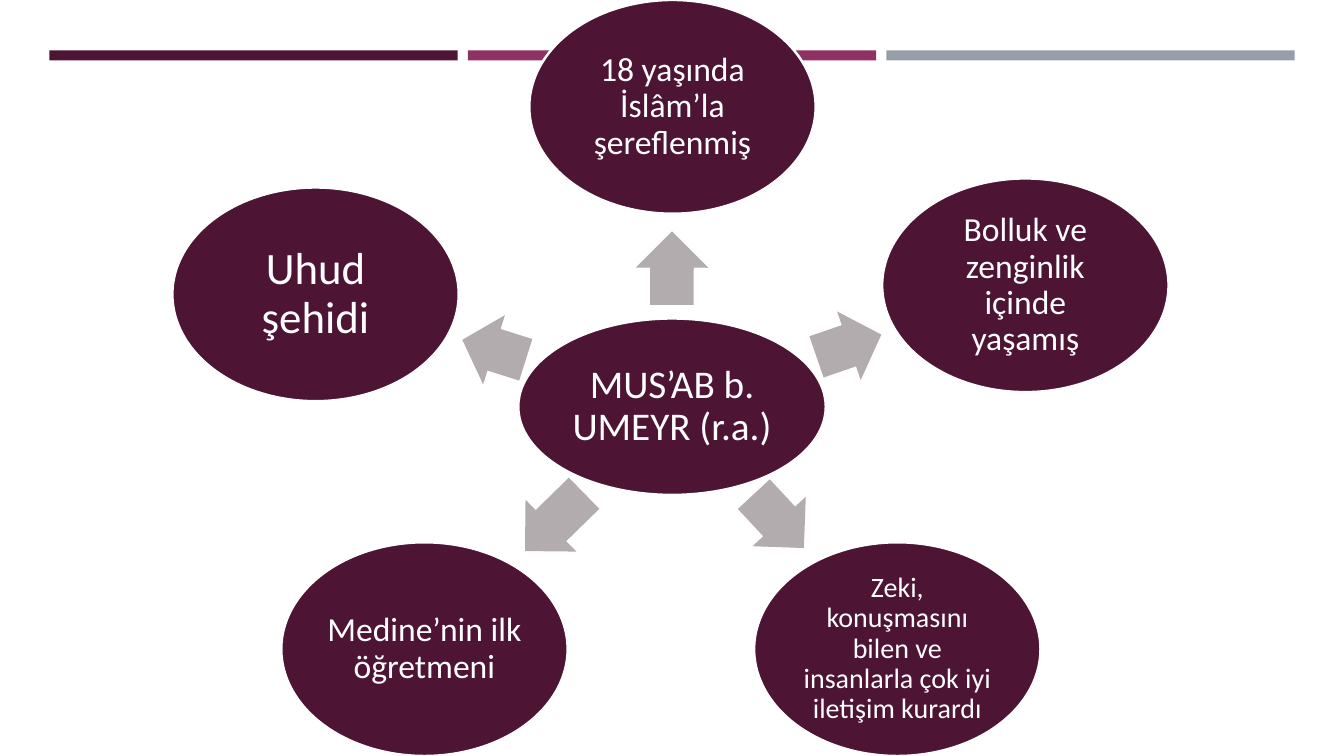
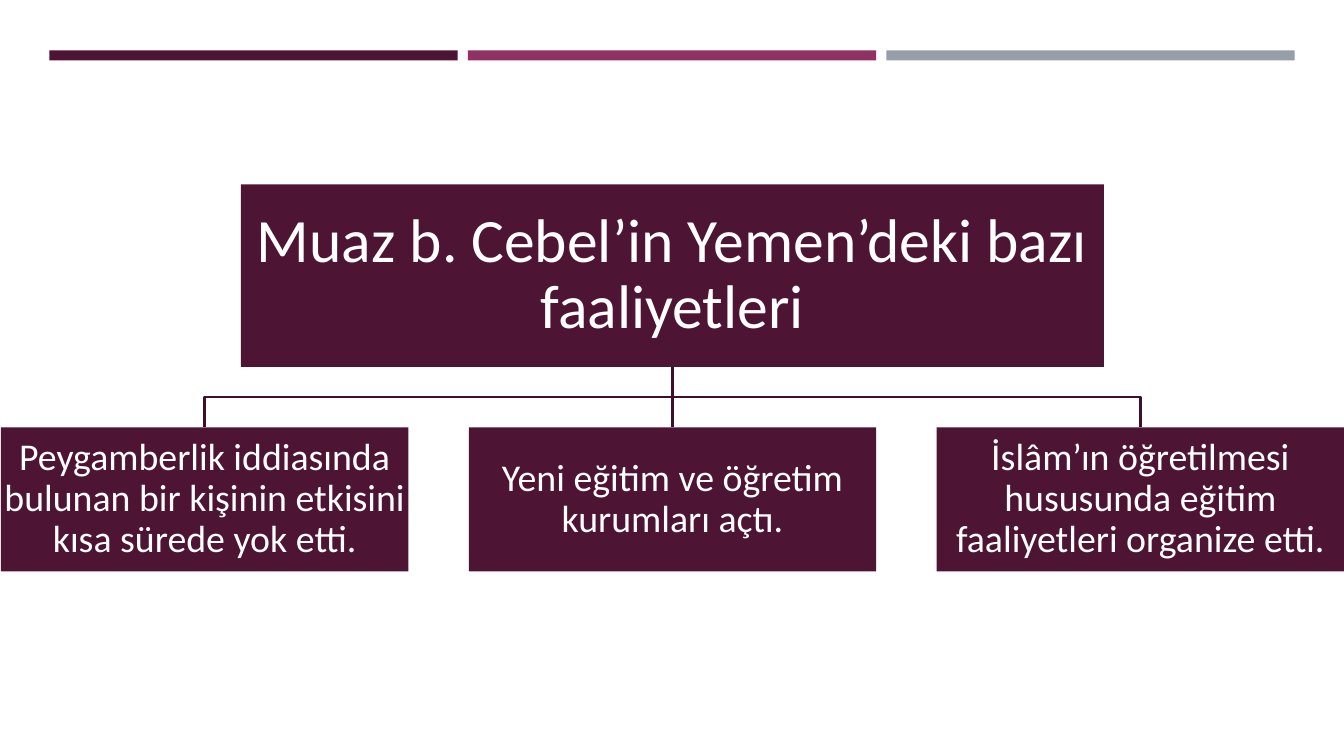
from math import atan2, degrees

from lxml import etree
from pptx import Presentation
from pptx.dml.color import RGBColor
from pptx.enum.shapes import MSO_CONNECTOR as Connector, MSO_SHAPE as Preset
from pptx.enum.text import MSO_ANCHOR as Anchor, PP_ALIGN as Align
from pptx.oxml.ns import qn
from pptx.util import Emu, Pt

# Shared style: one px is a hundredth of an inch
PX = 9144
SLIDE_WIDTH, SLIDE_HEIGHT = 1333, 750
FONT = "Calibri"
PLUM, MAGENTA, STEEL = "4D1434", "903163", "969FA7"
ARROW_GREY, LINE_PLUM, WHITE = "B2ACAE", "3E102A", "FFFFFF"
LINE_WIDTH = 1.75

# Radial diagram: left, top, width, height of the hub
HUB = (514, 316, 305, 175)
HUB_TEXT = "MUS’AB b. UMEYR (r.a.)"
SATELLITE_WIDTH, SATELLITE_HEIGHT = 284, 212
ARROW_HEIGHT = 72
# Text, font size, (left, top), arrow (left, top, length)
SATELLITES = [
    ("18 yaşında İslâm’la şereflenmiş", 24, (525, 0), (630, 230, 73)),
    ("Bolluk ve zenginlik içinde yaşamış", 24, (875, 177), (808, 307, 68)),
    ("Zeki, konuşmasını bilen ve insanlarla çok iyi iletişim kurardı", 20,
     (748, 538), (736, 481, 73)),
    ("Medine’nin ilk öğretmeni", 24, (279, 538), (509, 482, 82)),
    ("Uhud şehidi", 32, (171, 186), (457, 311, 66)),
]

# Hierarchy
ROOT = (239, 183, 856, 181)
ROOT_TEXT = "Muaz b. Cebel’in Yemen’deki bazı faaliyetleri"
CHILD_LEFT, CHILD_TOP, CHILD_PITCH = 1, 424, 464
CHILD_WIDTH, CHILD_HEIGHT = 404, 143
CHILD_TEXTS = [
    "Peygamberlik iddiasında bulunan bir kişinin etkisini kısa sürede yok etti.",
    "Yeni eğitim ve öğretim kurumları açtı.",
    "İslâm’ın öğretilmesi hususunda eğitim faaliyetleri organize etti.",
]


def px(length):
    return Emu(round(length * PX))


def color(value):
    return RGBColor.from_string(value)


def style_line(line, value):
    line.color.rgb = color(value)
    line.width = Pt(LINE_WIDTH)


def add_box(slide, preset, box, fill, outline=None):
    shape = slide.shapes.add_shape(preset, *map(px, box))
    shape.shadow.inherit = False
    shape.fill.solid()
    shape.fill.fore_color.rgb = color(fill)
    if outline:
        style_line(shape.line, outline)
    else:
        shape.line.fill.background()
    return shape


def write(shape, text, size, inset):
    frame = shape.text_frame
    frame.text = text
    frame.word_wrap = True
    frame.vertical_anchor = Anchor.MIDDLE
    frame.margin_left = frame.margin_right = px(inset)
    frame.margin_top = frame.margin_bottom = px(inset)
    paragraph = frame.paragraphs[0]
    paragraph.alignment = Align.CENTER
    paragraph.line_spacing = 0.9
    font = paragraph.runs[0].font
    font.name, font.size = FONT, Pt(size)
    font.color.rgb = color(WHITE)


def center(box):
    left, top, width, height = box
    return left + width / 2, top + height / 2


def add_ellipse(slide, box, text, size, inset):
    write(add_box(slide, Preset.OVAL, box, PLUM, WHITE), text, size, inset)


def add_arrow(slide, box, angle):
    arrow = add_box(slide, Preset.RIGHT_ARROW, box, ARROW_GREY)
    arrow.adjustments[0], arrow.adjustments[1] = 0.6, 0.5
    arrow.rotation = angle


def add_branch(slide, start, end):
    """Join two points, with a step halfway down if they are not aligned."""
    (start_x, start_y), (end_x, end_y) = start, end
    if start_x == end_x:
        branch = slide.shapes.add_connector(Connector.STRAIGHT, *map(px, start + end))
        etree.SubElement(branch.element.spPr, qn("a:effectLst"))
    else:
        middle = (start_y + end_y) / 2
        builder = slide.shapes.build_freeform(start_x, start_y, scale=PX)
        builder.add_line_segments([(start_x, middle), (end_x, middle), end], close=False)
        branch = builder.convert_to_shape()
        branch.shadow.inherit = False
        branch.fill.background()
    style_line(branch.line, LINE_PLUM)


def add_slide(presentation):
    """Blank slide with the three bars along the top."""
    slide = presentation.slides.add_slide(presentation.slide_layouts[6])
    for index, fill in enumerate((PLUM, MAGENTA, STEEL)):
        add_box(slide, Preset.RECTANGLE, (49 + index * 415, 50, 405, 10), fill)
    return slide


def build_radial(slide):
    add_ellipse(slide, HUB, HUB_TEXT, 28, 4)
    hub_x, hub_y = center(HUB)
    for text, size, corner, (left, top, length) in SATELLITES:
        box = (*corner, SATELLITE_WIDTH, SATELLITE_HEIGHT)
        x, y = center(box)
        # Each arrow points from the hub to its satellite
        angle = round(degrees(atan2(y - hub_y, x - hub_x)) % 360, 1)
        add_arrow(slide, (left, top, length, ARROW_HEIGHT), angle)
        add_ellipse(slide, box, text, size, 3)


def build_hierarchy(slide):
    children = [(CHILD_LEFT + index * CHILD_PITCH, CHILD_TOP, CHILD_WIDTH, CHILD_HEIGHT)
                for index in range(len(CHILD_TEXTS))]
    root_bottom = (center(ROOT)[0], ROOT[1] + ROOT[3])
    for child in children:
        add_branch(slide, root_bottom, (center(child)[0], CHILD_TOP))
    write(add_box(slide, Preset.RECTANGLE, ROOT, PLUM), ROOT_TEXT, 44, 3)
    for child, text in zip(children, CHILD_TEXTS):
        write(add_box(slide, Preset.RECTANGLE, child, PLUM), text, 27, 2)


def main():
    presentation = Presentation()
    presentation.slide_width = px(SLIDE_WIDTH)
    presentation.slide_height = px(SLIDE_HEIGHT)
    build_radial(add_slide(presentation))
    build_hierarchy(add_slide(presentation))
    presentation.save("out.pptx")


if __name__ == "__main__":
    main()
